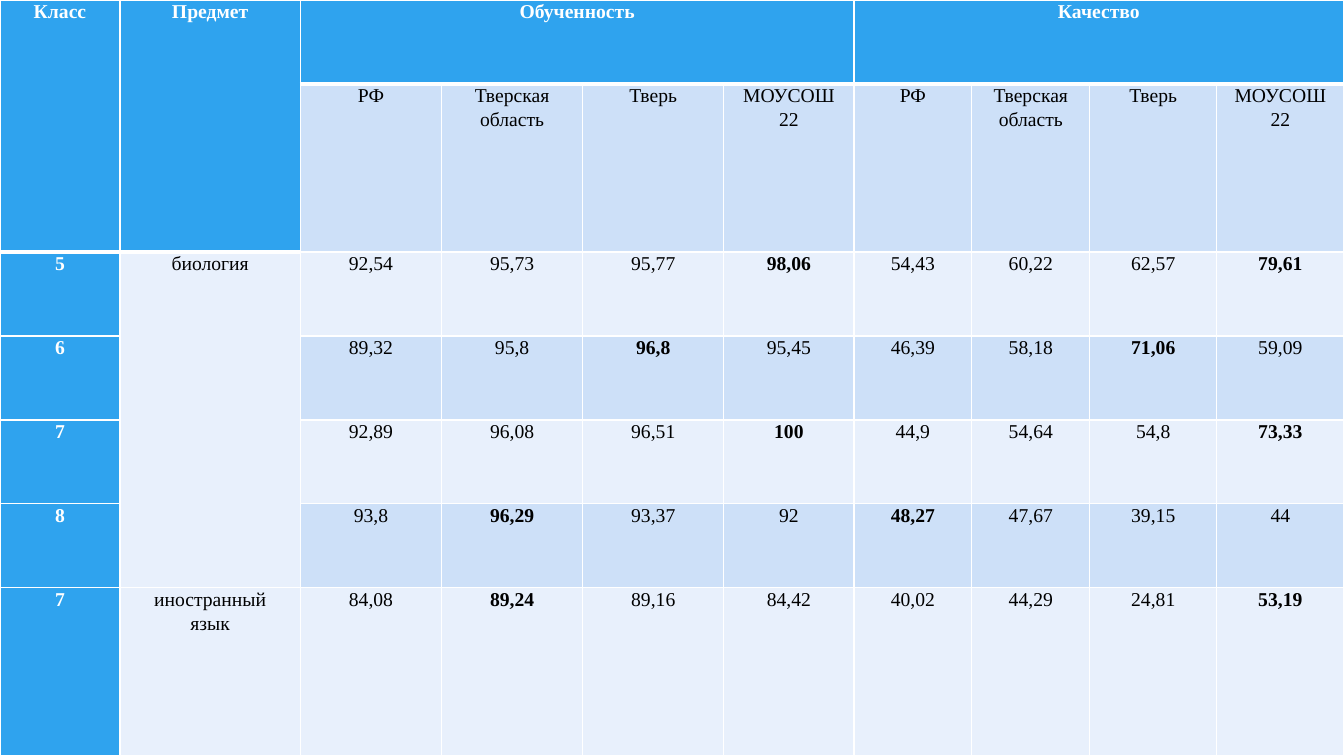
from dataclasses import dataclass

from lxml import etree
from pptx import Presentation
from pptx.dml.color import RGBColor
from pptx.enum import text
from pptx.oxml import ns
from pptx.table import Table, _Cell
from pptx.util import Inches, Pt

WHITE = RGBColor(0xFF, 0xFF, 0xFF)
BLACK = RGBColor(0x00, 0x00, 0x00)
GRAY = RGBColor(0xB9, 0xB9, 0xB9)
BLUE = RGBColor(0x2F, 0xA3, 0xEE)
MID = RGBColor(0xCD, 0xE0, 0xF8)
PALE = RGBColor(0xE8, 0xF0, 0xFC)

WIDTHS = [1.19, 1.79, 1.4, 1.4, 1.4, 1.29, 1.17, 1.17, 1.26, 1.26]
UNITS = [1, 2, 1, 1, 1, 1, 2]
STEP = 7.5 / sum(UNITS)
PLACES = ["РФ", "Тверская область", "Тверь", "МОУСОШ\n22"]
SPANS = [(0, 0, 1, 0), (0, 1, 1, 1), (0, 2, 0, 5), (0, 6, 0, 9), (2, 1, 5, 1)]


@dataclass
class Result:
    grade: str
    subject: str
    passed: list[str]
    quality: list[str]


RESULTS = [
    Result("5", "биология", ["92,54", "95,73", "95,77", "98,06"],
           ["54,43", "60,22", "62,57", "79,61"]),
    Result("6", "", ["89,32", "95,8", "96,8", "95,45"],
           ["46,39", "58,18", "71,06", "59,09"]),
    Result("7", "", ["92,89", "96,08", "96,51", "100"],
           ["44,9", "54,64", "54,8", "73,33"]),
    Result("8", "", ["93,8", "96,29", "93,37", "92"],
           ["48,27", "47,67", "39,15", "44"]),
    Result("7", "иностранный\nязык", ["84,08", "89,24", "89,16", "84,42"],
           ["40,02", "44,29", "24,81", "53,19"]),
]


def number(value: str) -> float:
    return float(value.replace(",", "."))


def add_edges(cell: _Cell, top: float, bottom: float) -> None:
    """Draw white cell borders; the sides are 1 pt wide."""
    props = cell._tc.get_or_add_tcPr()
    for side, width in (("L", 1), ("R", 1), ("T", top), ("B", bottom)):
        line = etree.SubElement(props, ns.qn(f"a:ln{side}"), w=str(Pt(width)))
        fill = etree.SubElement(line, ns.qn("a:solidFill"))
        etree.SubElement(fill, ns.qn("a:srgbClr"), val=str(WHITE))


def fill_cell(table: Table, row: int, col: int, words: str, best: bool) -> None:
    cell = table.cell(row, col)
    head = row == 0 or col == 0 or (row == 1 and col == 1)
    # The thick rule runs under the header, one row lower for two-row cells.
    low = 1 if col < 2 else 0
    add_edges(cell, 3 if row == low + 1 else 1, 3 if row <= low else 1)
    cell.fill.solid()
    band = MID if row % 2 else PALE
    cell.fill.fore_color.rgb = BLUE if head else band
    cell.margin_left = cell.margin_right = Inches(0.04)
    cell.margin_top = cell.margin_bottom = 0
    cell.text = words
    for para in cell.text_frame.paragraphs:
        para.alignment = text.PP_ALIGN.CENTER
        para.line_spacing = 1.07
        font = para.font
        font.name = "Times New Roman"
        font.size = Pt(14)
        font.bold = head or best
        font.color.rgb = WHITE if head else BLACK


def add_table(slide) -> None:
    frame = slide.shapes.add_table(
        len(UNITS), len(WIDTHS), 0, 0, Inches(13.33), Inches(7.5))
    table = frame.table
    table.first_row = table.horz_banding = False
    for column, width in zip(table.columns, WIDTHS):
        column.width = Inches(width)
    for row, units in zip(table.rows, UNITS):
        row.height = Inches(units * STEP)

    grid = [["Класс", "Предмет", "Обученность", "", "", "", "Качество", "", "", ""],
            ["", "", *PLACES, *PLACES]]
    grid += [[r.grade, r.subject, *r.passed, *r.quality] for r in RESULTS]
    # The highest value of each group is bold.
    tops = {(i, start + group.index(max(group, key=number)))
            for i, r in enumerate(RESULTS, 2)
            for start, group in ((2, r.passed), (6, r.quality))}
    for i, line in enumerate(grid):
        for j, words in enumerate(line):
            fill_cell(table, i, j, words, (i, j) in tops)
    for top, left, bottom, right in SPANS:
        table.cell(top, left).merge(table.cell(bottom, right))


def main() -> None:
    deck = Presentation()
    deck.slide_width, deck.slide_height = Inches(13.33), Inches(7.5)
    slide = deck.slides.add_slide(deck.slide_layouts[6])
    back = slide.background.fill
    back.gradient()
    back.gradient_angle = 270
    for stop, color in zip(back.gradient_stops, (WHITE, GRAY)):
        stop.color.rgb = color
    add_table(slide)
    deck.save("out.pptx")


if __name__ == "__main__":
    main()
